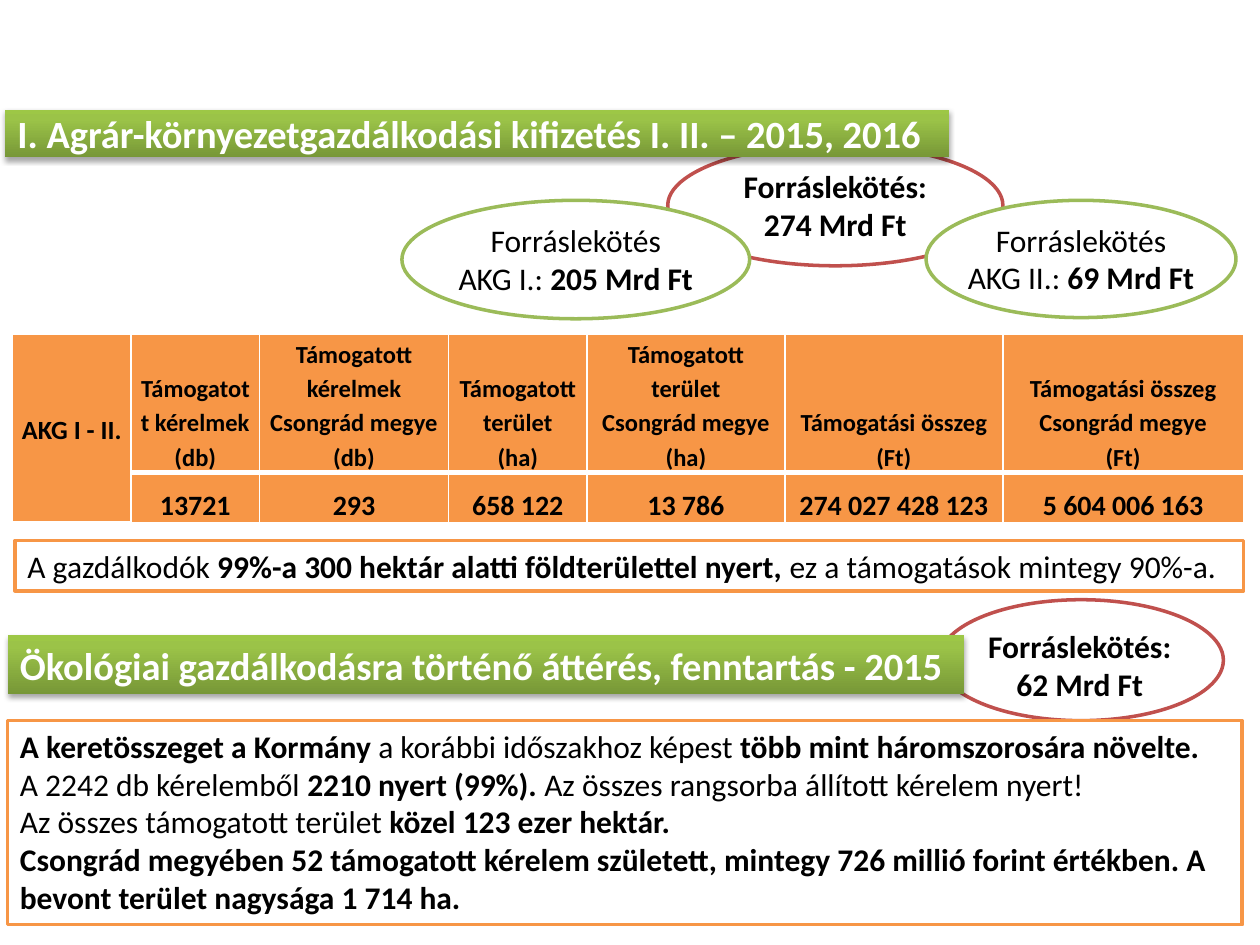
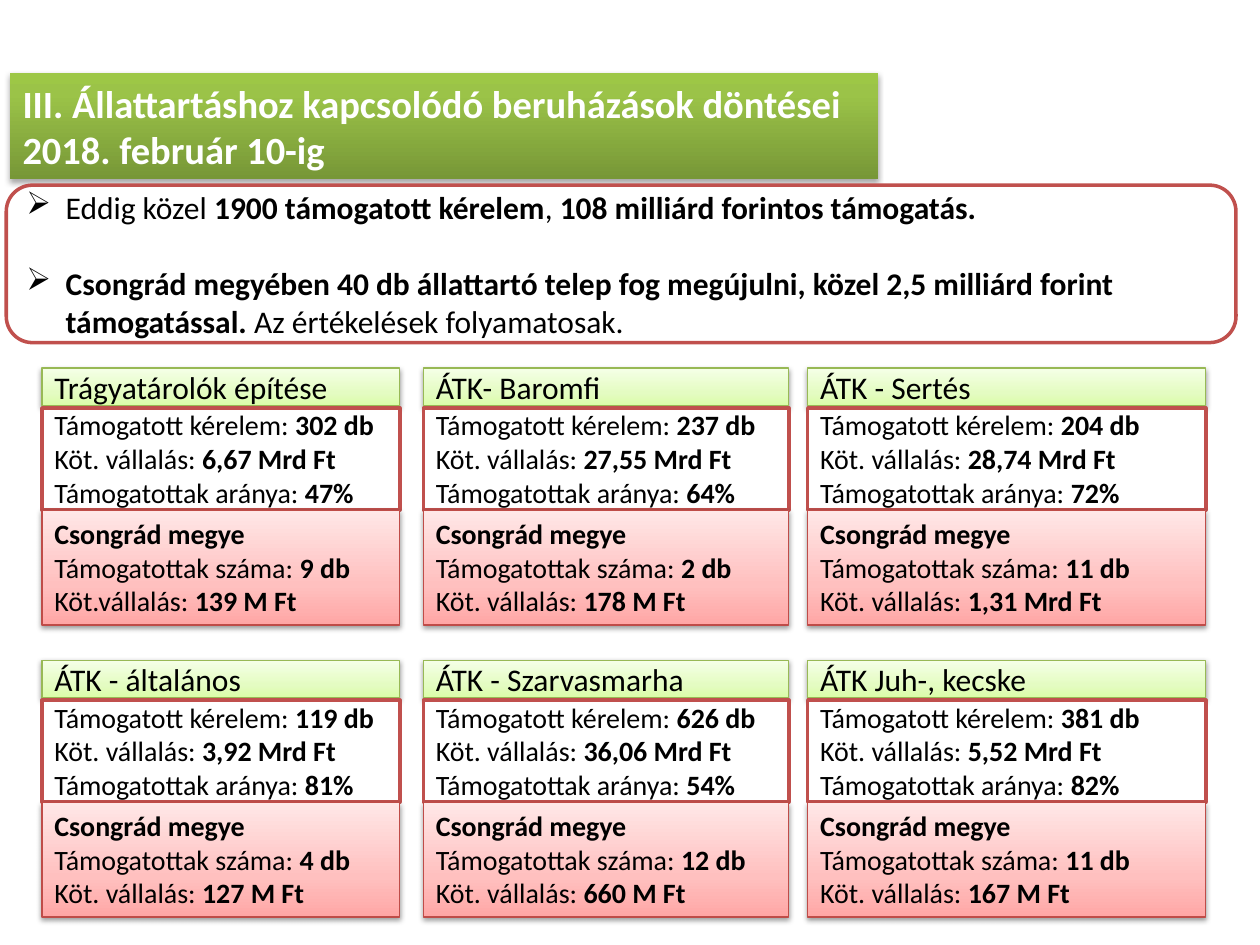
import pptx
import pptx.dml.color
import pptx.enum.shapes
import pptx.enum.text
import pptx.oxml
import pptx.oxml.ns
import pptx.util

Pt = pptx.util.Pt
SHAPES = pptx.enum.shapes.MSO_SHAPE
ANCHOR = pptx.enum.text.MSO_ANCHOR
ALIGN = pptx.enum.text.PP_ALIGN
NAMESPACE = pptx.oxml.ns.nsdecls("a")

FONT = "Calibri"
BLACK, WHITE = "000000", "FFFFFF"
RED, GREEN, ORANGE = "C0504D", "9BBB59", "F79646"
# Gradients run from the bottom edge up: (percent, colour)
BAND_FILL = [(0, "779737"), (80, "9BC348"), (100, "9DC746")]
LIME_FILL = [(0, "DAFDA7"), (35, "E4FCC2"), (100, "F5FFE7")]
PINK_FILL = [(0, "FFA6A5"), (35, "FFC0BF"), (100, "FFE7E7")]


def colour(code):
    return pptx.dml.color.RGBColor.from_string(code)


def element(markup):
    """Parse one drawing element, adding its namespace to the outer tag."""
    name, rest = markup[1:].split(" ", 1)
    return pptx.oxml.parse_xml(f"<{name} {NAMESPACE} {rest}")


def write_spans(para, text, size, ink=BLACK):
    """Add runs; parts between asterisks are bold."""
    for index, part in enumerate(text.split("*")):
        if part:
            span = para.add_run()
            span.text = part
            span.font.name = FONT
            span.font.size = Pt(size)
            span.font.bold = index % 2 == 1
            span.font.color.rgb = colour(ink)


def write_lines(frame, lines, size, ink=BLACK, align=ALIGN.LEFT, spacing=None):
    for index, line in enumerate(lines):
        para = frame.add_paragraph() if index else frame.paragraphs[0]
        para.alignment = align
        if spacing:
            para.line_spacing = spacing
        write_spans(para, line, size, ink)


def set_gradient(shape, stops):
    shape.fill.gradient()
    shape.fill.gradient_angle = 90
    stop_list = shape.fill._fill._gradFill.find(pptx.oxml.ns.qn("a:gsLst"))
    for stop in list(stop_list):
        stop_list.remove(stop)
    for percent, code in stops:
        stop_list.append(element(
            f'<a:gs pos="{percent * 1000}"><a:srgbClr val="{code}"/></a:gs>'))


def set_shadow(shape, opacity, distance):
    effects = shape._element.spPr.find(pptx.oxml.ns.qn("a:effectLst"))
    effects.append(element(
        f'<a:outerShdw blurRad="{Pt(3.1)}" dist="{Pt(distance)}" dir="5400000" '
        f'rotWithShape="0"><a:srgbClr val="{BLACK}">'
        f'<a:alpha val="{opacity * 1000}"/></a:srgbClr></a:outerShdw>'))


def add_panel(page, box, fill=WHITE, line=None, width=2, kind=SHAPES.RECTANGLE,
              anchor=ANCHOR.TOP, padding=3.6):
    shape = page.shapes.add_shape(kind, *map(Pt, box))
    shape.shadow.inherit = False
    if isinstance(fill, list):
        set_gradient(shape, fill)
    else:
        shape.fill.solid()
        shape.fill.fore_color.rgb = colour(fill)
    if line:
        shape.line.color.rgb = colour(line)
        shape.line.width = Pt(width)
    else:
        shape.line.fill.background()
    frame = shape.text_frame
    frame.word_wrap = True
    frame.vertical_anchor = anchor
    frame.margin_top = frame.margin_bottom = Pt(padding)
    return shape


def add_band(page, box, lines):
    """Green heading band."""
    band = add_panel(page, box, BAND_FILL, anchor=ANCHOR.MIDDLE)
    set_shadow(band, 35, 1.8)
    write_lines(band.text_frame, [f"*{line}*" for line in lines], 22, WHITE)


def add_oval(page, box, line, lines, shift=(0, 0)):
    """Outlined oval with a centred caption, moved by shift."""
    left, top, width, height = box
    add_panel(page, box, line=line, kind=SHAPES.OVAL)
    caption_height = 51
    caption = page.shapes.add_textbox(
        Pt(left + shift[0]), Pt(top + (height - caption_height) / 2 + shift[1]),
        Pt(width), Pt(caption_height))
    caption.text_frame.word_wrap = False
    write_lines(caption.text_frame, lines, 18, align=ALIGN.CENTER)


def add_note(page, box, lines):
    """Orange framed text."""
    note = add_panel(page, box, line=ORANGE)
    write_lines(note.text_frame, lines, 18)


def fill_cell(cell, lines, size, anchor, bottom):
    cell.fill.solid()
    cell.fill.fore_color.rgb = colour(ORANGE)
    cell.vertical_anchor = anchor
    cell.margin_left = cell.margin_right = Pt(3.6)
    cell.margin_top = cell.margin_bottom = 0
    write_lines(cell.text_frame, [f"*{line}*" for line in lines], size,
                align=ALIGN.CENTER, spacing=1.15)
    properties = cell._tc.get_or_add_tcPr()
    for index, (side, width) in enumerate(zip("LRTB", (1, 1, 1, bottom))):
        properties.insert(index, element(
            f'<a:ln{side} w="{Pt(width)}"><a:solidFill>'
            f'<a:srgbClr val="{WHITE}"/></a:solidFill></a:ln{side}>'))


def add_support_table(page, box, widths, heights, row_title, columns):
    frame = page.shapes.add_table(2, len(widths), *map(Pt, box))
    table = frame.table
    table.first_row = table.horz_banding = False
    for column, width in zip(table.columns, widths):
        column.width = Pt(width)
    for row, height in zip(table.rows, heights):
        row.height = Pt(height)
    table.cell(0, 0).merge(table.cell(1, 0))
    fill_cell(table.cell(0, 0), [row_title], 15, ANCHOR.MIDDLE, 3)
    for index, (heading, value) in enumerate(columns, 1):
        fill_cell(table.cell(0, index), heading, 14, ANCHOR.BOTTOM, 3)
        fill_cell(table.cell(1, index), [value], 16, ANCHOR.BOTTOM, 1)


def add_bullets(page, box, lines):
    """Rounded red frame with arrow bullets, one line apart."""
    panel = add_panel(page, box, line=RED, kind=SHAPES.ROUNDED_RECTANGLE,
                      anchor=ANCHOR.MIDDLE)
    frame = panel.text_frame
    for index, line in enumerate(lines):
        para = frame.add_paragraph() if index else frame.paragraphs[0]
        properties = para._p.get_or_add_pPr()
        properties.set("marL", str(Pt(22.5)))
        properties.set("indent", str(-Pt(22.5)))
        properties.append(element('<a:buChar char="➢"/>'))
        para.alignment = ALIGN.LEFT
        if index:
            para.space_before = Pt(22)
        write_spans(para, line, 18)


def add_card(page, left, top, width, card):
    """Heading, national figures and county figures, stacked."""
    title, requests, amount, share, county_requests, amount_label, county_amount = card

    heading = add_panel(page, (left, top, width, 21.6), LIME_FILL, "98B955", 0.75,
                        padding=0)
    set_shadow(heading, 38, 1.6)
    write_lines(heading.text_frame, [title], 18)

    national = add_panel(page, (left, top + 22.8, width, 58.3), line=RED, padding=0)
    write_lines(national.text_frame, [
        f"Támogatott kérelem: *{requests} db*",
        f"Köt. vállalás: *{amount} Mrd Ft*",
        f"Támogatottak aránya: *{share}%*"], 16)

    county = add_panel(page, (left, top + 81.3, width, 65.5), PINK_FILL, "BF4C48", 0.75)
    set_shadow(county, 38, 1.6)
    write_lines(county.text_frame, [
        "*Csongrád megye*",
        f"Támogatottak száma: *{county_requests} db*",
        f"{amount_label}: *{county_amount} Ft*"], 16)


def build_payments(page):
    # Agri-environment payments
    add_oval(page, (381.6, 82.8, 191.5, 69.1), RED,
             ["*Forráslekötés:*", "*274 Mrd Ft*"])
    add_band(page, (2.9, 62.6, 539.3, 27.4),
             ["I. Agrár-környezetgazdálkodási kifizetés I. II. – 2015, 2016"])
    add_oval(page, (229.7, 114.5, 198.7, 67.7), GREEN,
             ["Forráslekötés", "AKG I.: *205 Mrd Ft*"])
    add_oval(page, (529.2, 114.5, 177.1, 67), GREEN,
             ["Forráslekötés", "AKG II.: *69 Mrd Ft*"])
    add_support_table(
        page, (7.2, 190.8, 704.2, 108),
        (67.7, 73.4, 108, 79.2, 113, 124.6, 137.5), (79.2, 28.8), "AKG I - II.", [
            (["Támogatott kérelmek", "(db)"], "13721"),
            (["Támogatott kérelmek", "Csongrád megye", "(db)"], "293"),
            (["Támogatott terület", "(ha)"], "658 122"),
            (["Támogatott terület", "Csongrád megye", "(ha)"], "13 786"),
            (["Támogatási összeg", "(Ft)"], "274 027 428 123"),
            (["Támogatási összeg", "Csongrád megye", "(Ft)"], "5 604 006 163")])
    add_note(page, (8.6, 308.9, 702, 28.8), [
        "A gazdálkodók *99%-a 300 hektár alatti földterülettel nyert, *"
        "ez a támogatások mintegy 90%-a."])

    # Organic farming
    add_oval(page, (536.4, 342.7, 162.7, 69.1), RED,
             ["*Forráslekötés:*", "*62 Mrd Ft*"], shift=(-0.7, 3.2))
    add_note(page, (4.3, 411.8, 705.6, 116.6), [
        "*A keretösszeget a Kormány *a korábbi időszakhoz képest "
        "*több mint háromszorosára növelte.*",
        "A 2242 db kérelemből *2210 nyert (99%). *"
        "Az összes rangsorba állított kérelem nyert!",
        "Az összes támogatott terület *közel 123 ezer hektár.*",
        "*Csongrád megyében 52 támogatott kérelem született, mintegy 726 millió "
        "forint értékben. A bevont terület nagysága 1 714 ha.*"])
    add_band(page, (4.3, 362.9, 546.5, 33.8),
             ["Ökológiai gazdálkodásra történő áttérés, fenntartás - 2015"])


def build_livestock(page):
    add_band(page, (5.8, 41.8, 496, 60.5),
             ["III. Állattartáshoz kapcsolódó beruházások döntései",
              "2018. február 10-ig"])
    add_bullets(page, (3.6, 105.8, 702.7, 90), [
        "Eddig közel *1900 támogatott kérelem*, *108 milliárd forintos támogatás.*",
        "*Csongrád megyében 40 db állattartó telep fog megújulni, közel 2,5 milliárd "
        "forint támogatással. *Az értékelések folyamatosak."])

    # Grid of investment cards
    columns = [(24, 204.5), (242, 208.8), (461.6, 227.5)]
    rows = [210.3, 377.3]
    label = "Köt. vállalás"
    cards = [
        ("Trágyatárolók építése", 302, "6,67", 47, 9, "Köt.vállalás", "139 M"),
        ("ÁTK- Baromfi", 237, "27,55", 64, 2, label, "178 M"),
        ("ÁTK - Sertés", 204, "28,74", 72, 11, label, "1,31 Mrd"),
        ("ÁTK - általános", 119, "3,92", 81, 4, label, "127 M"),
        ("ÁTK - Szarvasmarha", 626, "36,06", 54, 12, label, "660 M"),
        ("ÁTK Juh-, kecske", 381, "5,52", 82, 11, label, "167 M")]
    for index, card in enumerate(cards):
        row, column = divmod(index, len(columns))
        left, width = columns[column]
        add_card(page, left, rows[row], width, card)


def main():
    deck = pptx.Presentation()
    deck.slide_width, deck.slide_height = Pt(720), Pt(540)
    for build in (build_payments, build_livestock):
        build(deck.slides.add_slide(deck.slide_layouts[6]))
    deck.save("out.pptx")


if __name__ == "__main__":
    main()
